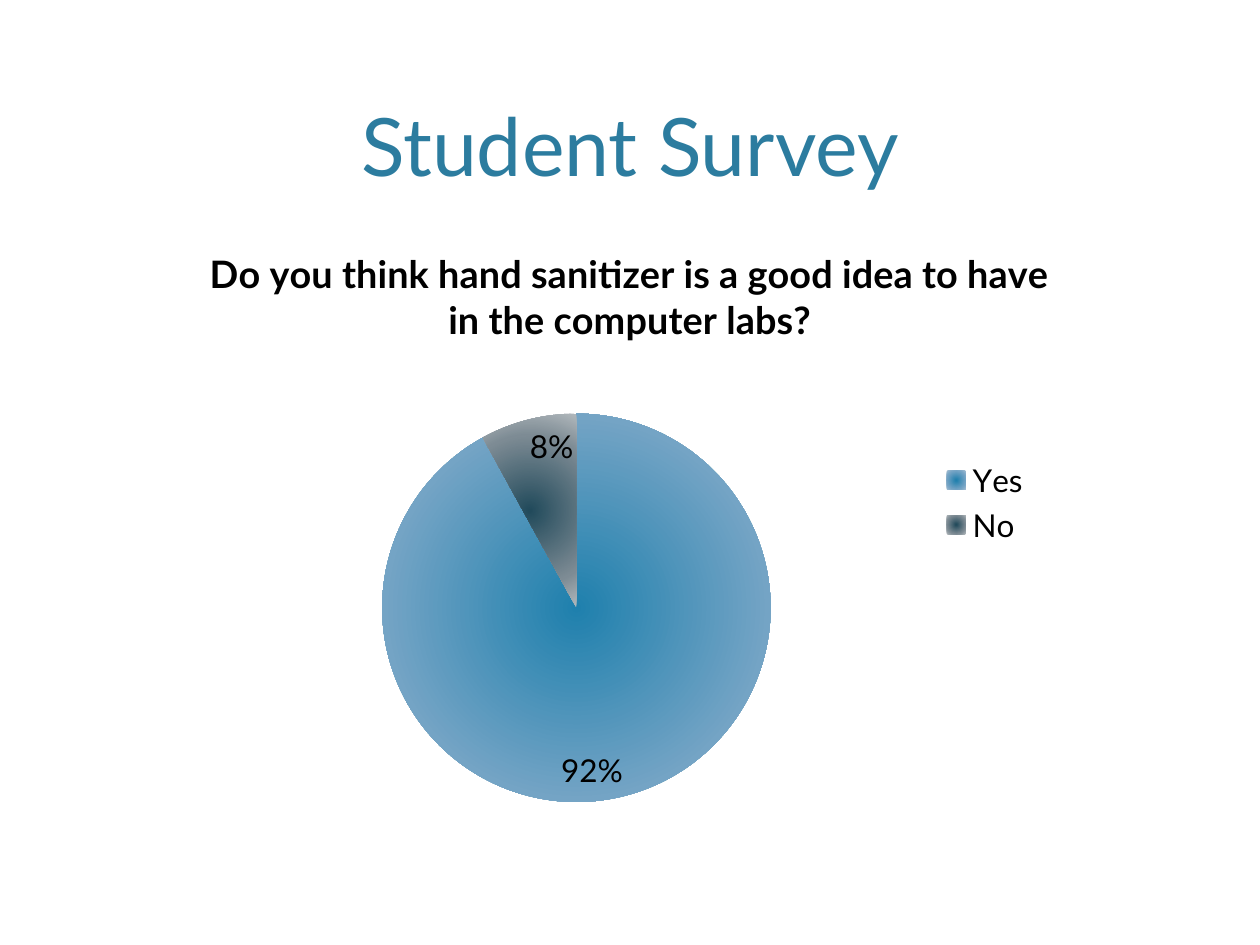
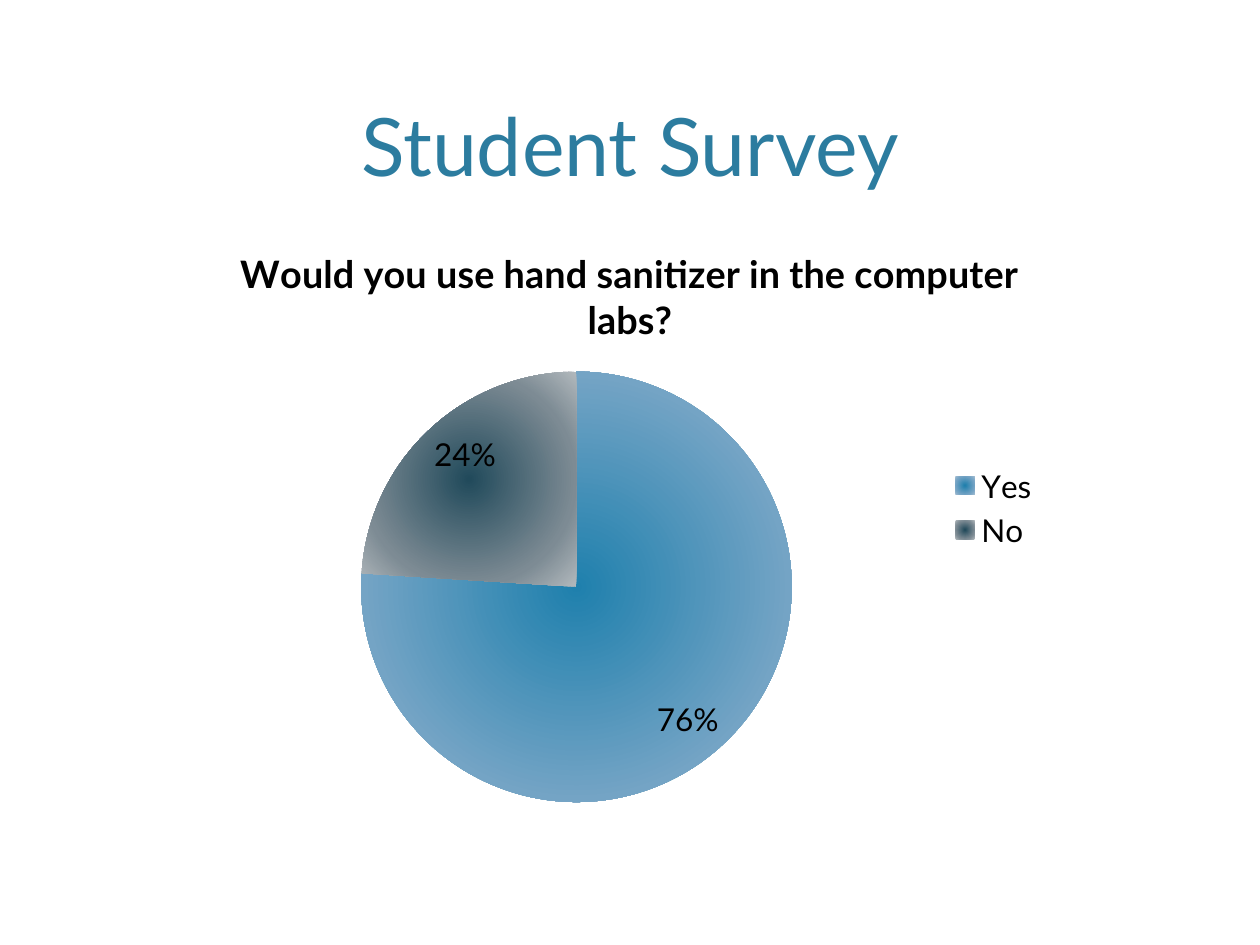
import pptx
import pptx.chart.data
import pptx.dml.color
import pptx.enum.chart
import pptx.enum.text
import pptx.oxml
import pptx.oxml.ns
import pptx.util

Pt = pptx.util.Pt
RGBColor = pptx.dml.color.RGBColor

FONT = "Lato"
TITLE_BLUE = RGBColor(0x2C, 0x7C, 0x9F)
BLACK = RGBColor(0, 0, 0)
# Centre, middle and rim of each slice
YES_BLUES = RGBColor(0x1F, 0x80, 0xAD), RGBColor(0x74, 0xA4, 0xC5), RGBColor(0xA5, 0xC0, 0xD4)
NO_GREYS = RGBColor(0x21, 0x4A, 0x5B), RGBColor(0x7D, 0x8B, 0x94), RGBColor(0xB2, 0xB9, 0xBD)
STOPS = 0, 70, 100

LEFT, WIDTH = 43.2, 633.6
CHART_TOP, CHART_HEIGHT = 126, 342
PIE_CENTRE, PIE_BOTTOM = 286.2, 332.4


def set_font(font, size, color, bold=False):
    font.name = FONT
    font.size = Pt(size)
    font.bold = bold
    font.color.rgb = color


def add_title(s, text):
    tb = s.shapes.add_textbox(Pt(LEFT), Pt(8.64), Pt(WIDTH), Pt(105.12))
    tf = tb.text_frame
    tf.word_wrap = True
    tf.vertical_anchor = pptx.enum.text.MSO_ANCHOR.BOTTOM
    p = tf.paragraphs[0]
    p.text = text
    p.alignment = pptx.enum.text.PP_ALIGN.CENTER
    set_font(p.font, 46, TITLE_BLUE)


def fill_radial(point, colors):
    stops = "".join(
        f'<a:gs pos="{pos * 1000}"><a:srgbClr val="{color}"/></a:gs>'
        for pos, color in zip(STOPS, colors))
    spPr = point.format.fill._xPr
    spPr.insert(0, pptx.oxml.parse_xml(
        f'<a:gradFill {pptx.oxml.ns.nsdecls("a")} rotWithShape="1"><a:gsLst>{stops}</a:gsLst>'
        '<a:path path="circle"><a:fillToRect l="50000" t="50000" r="50000" b="50000"/></a:path>'
        '</a:gradFill>'))
    point.format.line.fill.background()


def layout_xml(x, y, w=None, h=None):
    """Manual chart layout from lengths in points within the chart frame."""
    parts = [("x", x / WIDTH), ("y", y / CHART_HEIGHT)]
    target = ""
    if w:
        parts += [("w", w / WIDTH), ("h", h / CHART_HEIGHT)]
        target = '<c:layoutTarget val="inner"/>'
    modes = '<c:xMode val="edge"/><c:yMode val="edge"/>'
    sizes = "".join(f'<c:{name} val="{value:.4f}"/>' for name, value in parts)
    return pptx.oxml.parse_xml(
        f'<c:layout {pptx.oxml.ns.nsdecls("c")}><c:manualLayout>'
        f'{target}{modes}{sizes}</c:manualLayout></c:layout>')


def place(element, layout, after=None):
    for old in element.findall(pptx.oxml.ns.qn("c:layout")):
        element.remove(old)
    if after is None:
        element.insert(0, layout)
    else:
        element.find(pptx.oxml.ns.qn(after)).addnext(layout)


def add_survey_pie(s, question, yes, diameter, legend_at):
    data = pptx.chart.data.CategoryChartData(number_format="0%")
    data.categories = ["Yes", "No"]
    data.add_series(question, [yes, round(1 - yes, 2)])
    chart = s.shapes.add_chart(
        pptx.enum.chart.XL_CHART_TYPE.PIE, Pt(LEFT), Pt(CHART_TOP),
        Pt(WIDTH), Pt(CHART_HEIGHT), data).chart
    set_font(chart.font, 18, BLACK)

    chart.has_title = True
    p = chart.chart_title.text_frame.paragraphs[0]
    p.text = question
    set_font(p.font, 21.6, BLACK, bold=True)

    plot = chart.plots[0]
    plot.vary_by_categories = True
    for i, colors in enumerate((YES_BLUES, NO_GREYS)):
        fill_radial(plot.series[0].points[i], colors)
    plot.has_data_labels = True
    labels = plot.data_labels
    labels.show_value = True
    labels.show_percentage = False
    labels.number_format = "0%"
    labels.number_format_is_linked = False
    labels.position = pptx.enum.chart.XL_LABEL_POSITION.INSIDE_END
    set_font(labels.font, 18, BLACK)

    chart.has_legend = True
    legend = chart.legend
    legend.position = pptx.enum.chart.XL_LEGEND_POSITION.RIGHT
    legend.include_in_layout = False
    set_font(legend.font, 18, BLACK)
    place(legend._element, layout_xml(*legend_at), after="c:legendPos")
    pie = layout_xml(PIE_CENTRE - diameter / 2, PIE_BOTTOM - diameter, diameter, diameter)
    place(chart._chartSpace.chart.plotArea, pie)


def main():
    prs = pptx.Presentation()
    prs.slide_width, prs.slide_height = Pt(720), Pt(540)
    surveys = [
        ("Do you think hand sanitizer is a good idea to have in the computer labs?",
         0.92, 222, (492, 134)),
        ("Would you use hand sanitizer in the computer labs?",
         0.76, 246, (497, 137)),
    ]
    for survey in surveys:
        s = prs.slides.add_slide(prs.slide_layouts[6])
        add_title(s, "Student Survey")
        add_survey_pie(s, *survey)
    prs.save("out.pptx")


if __name__ == "__main__":
    main()
